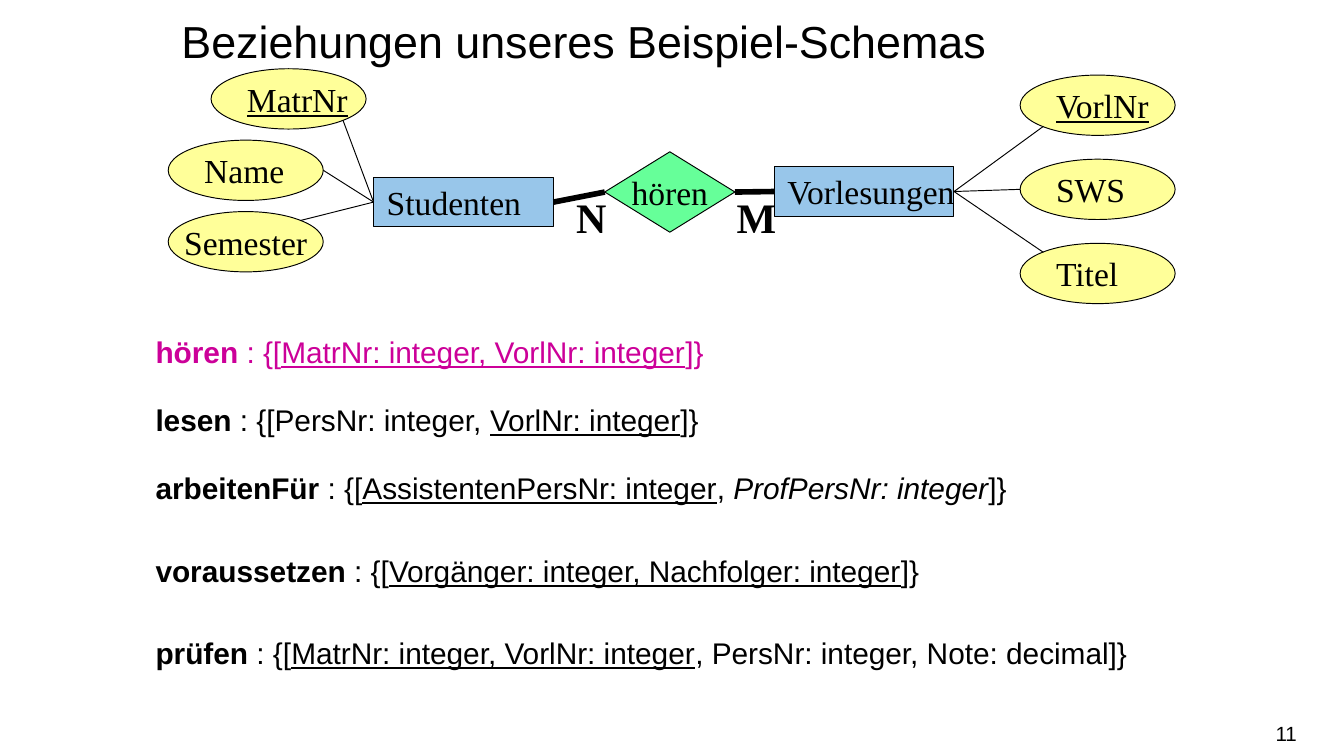
from lxml.etree import SubElement
from pptx import Presentation
from pptx.dml.color import RGBColor
from pptx.enum.shapes import MSO_CONNECTOR, MSO_SHAPE
from pptx.enum.text import MSO_ANCHOR, PP_ALIGN
from pptx.oxml.ns import qn
from pptx.util import Cm, Pt

COLORS = {
    "text": "000000",
    "highlight": "CC0099",
    "entity": "98C6EA",
    "attribute": "FFFF99",
    "relationship": "66FF99",
}
SANS, SERIF = "Arial", "Times New Roman"

# Points on a shape's outline, as fractions of its width and height
LEFT, RIGHT = (0, 0.5), (1, 0.5)
TOP_LEFT, BOTTOM_LEFT = (0.15, 0.15), (0.15, 0.85)
TOP_RIGHT, BOTTOM_RIGHT = (0.85, 0.15), (0.85, 0.85)

# Name, line spacing, colour, then (text, style) runs between the braces
RELATIONS = [
    ("hören", 1.4, "highlight", [("MatrNr: integer, VorlNr: integer", "u")]),
    ("lesen", 1.4, "text", [("PersNr: integer, ", ""), ("VorlNr: integer", "u")]),
    ("arbeitenFür", 1.4, "text",
     [("AssistentenPersNr: integer", "u"), (", ", ""), ("ProfPersNr: integer", "i")]),
    ("voraussetzen", 1.8, "text", [("Vorgänger: integer, Nachfolger: integer", "u")]),
    ("prüfen", 1.8, "text",
     [("MatrNr: integer, VorlNr: integer", "u"), (", PersNr: integer, Note: decimal", "")]),
]


def rgb(name):
    return RGBColor.from_string(COLORS[name])


def add_run(p, text, size, font, color="text", style=""):
    """Append a run; style holds any of the letters b, i and u."""
    r = p.add_run()
    r.text = text
    r.font.name, r.font.size = font, Pt(size)
    r.font.color.rgb = rgb(color)
    r.font.bold = "b" in style
    r.font.italic = "i" in style
    r.font.underline = "u" in style


def add_box(s, x, y, w, h, wrap=True):
    tf = s.shapes.add_textbox(Cm(x), Cm(y), Cm(w), Cm(h)).text_frame
    tf.word_wrap = wrap
    return tf


def add_node(s, kind, fill, text, x, y, w, h, align=PP_ALIGN.LEFT, style=""):
    sp = s.shapes.add_shape(kind, Cm(x), Cm(y), Cm(w), Cm(h))
    sp.shadow.inherit = False
    sp.fill.solid()
    sp.fill.fore_color.rgb = rgb(fill)
    sp.line.color.rgb = rgb("text")
    sp.line.width = Pt(0.5)
    tf = sp.text_frame
    tf.word_wrap = False
    tf.vertical_anchor = MSO_ANCHOR.MIDDLE
    p = tf.paragraphs[0]
    p.alignment = align
    add_run(p, text, 18, SERIF, style=style)
    return sp


def add_entity(s, text, x, y):
    return add_node(s, MSO_SHAPE.RECTANGLE, "entity", text, x, y, 3.4, 0.94)


def add_attribute(s, text, x, y, **options):
    return add_node(s, MSO_SHAPE.OVAL, "attribute", text, x, y, 2.93, 1.14, **options)


def outline_point(sp, site):
    fx, fy = site
    return int(sp.left + fx * sp.width), int(sp.top + fy * sp.height)


def add_link(s, start, start_site, end, end_site, width=0.5):
    line = s.shapes.add_connector(
        MSO_CONNECTOR.STRAIGHT,
        *outline_point(start, start_site), *outline_point(end, end_site))
    line.line.color.rgb = rgb("text")
    line.line.width = Pt(width)
    SubElement(line._element.spPr, qn("a:effectLst"))


def add_title(s, text):
    tf = add_box(s, 3.18, 0, 19.05, 1.3)
    tf.margin_top = tf.margin_bottom = 0
    p = tf.paragraphs[0]
    p.line_spacing = 1.25
    add_run(p, text, 24, SANS)


def add_diagram(s):
    students = add_entity(s, "Studenten", 7.06, 3.35)
    lectures = add_entity(s, "Vorlesungen", 14.63, 3.15)
    attend = add_node(s, MSO_SHAPE.DIAMOND, "relationship", "hören",
                      11.43, 2.87, 2.46, 1.52, align=PP_ALIGN.CENTER)
    add_link(s, students, RIGHT, attend, LEFT, 3)
    add_link(s, attend, RIGHT, lectures, LEFT, 3)

    student_attributes = [
        ("MatrNr", 3.99, BOTTOM_RIGHT, {"style": "u"}),
        ("Name", 3.18, RIGHT, {}),
        ("Semester", 3.18, TOP_RIGHT, {"align": PP_ALIGN.CENTER}),
    ]
    for i, (text, x, site, options) in enumerate(student_attributes):
        oval = add_attribute(s, text, x, 1.3 + 1.35 * i, **options)
        add_link(s, students, LEFT, oval, site)

    lecture_attributes = [
        ("VorlNr", BOTTOM_LEFT, "u"), ("SWS", LEFT, ""), ("Titel", TOP_LEFT, "")]
    for i, (text, site, style) in enumerate(lecture_attributes):
        oval = add_attribute(s, text, 19.28, 1.42 + 1.59 * i, style=style)
        add_link(s, lectures, RIGHT, oval, site)

    for text, x, w in [("N", 10.64, 1.09), ("M", 13.67, 1.27)]:
        tf = add_box(s, x, 3.5, w, 1.22, wrap=False)
        add_run(tf.paragraphs[0], text, 22.5, SERIF, style="b")


def add_relations(s):
    tf = add_box(s, 2.69, 5.92, 20.73, 7.44)
    for i, (name, spacing, color, attributes) in enumerate(RELATIONS):
        p = tf.add_paragraph() if i else tf.paragraphs[0]
        p.line_spacing = spacing
        p.space_before = Pt(9.6 if i else 0)
        for text, style in [(name, "b"), (" : {[", ""), *attributes, ("]}", "")]:
            add_run(p, text, 16, SANS, color, style)


def add_page_number(s, number):
    tf = add_box(s, 18.82, 13.49, 5.69, 0.76)
    tf.margin_left = tf.margin_right = 0
    tf.vertical_anchor = MSO_ANCHOR.MIDDLE
    p = tf.paragraphs[0]
    p.alignment = PP_ALIGN.RIGHT
    add_run(p, number, 11, SANS)


def main():
    prs = Presentation()
    prs.slide_width, prs.slide_height = Cm(25.4), Cm(14.29)
    s = prs.slides.add_slide(prs.slide_layouts[6])
    add_title(s, "Beziehungen unseres Beispiel-Schemas")
    add_relations(s)
    add_diagram(s)
    add_page_number(s, "11")
    prs.save("out.pptx")


if __name__ == "__main__":
    main()
